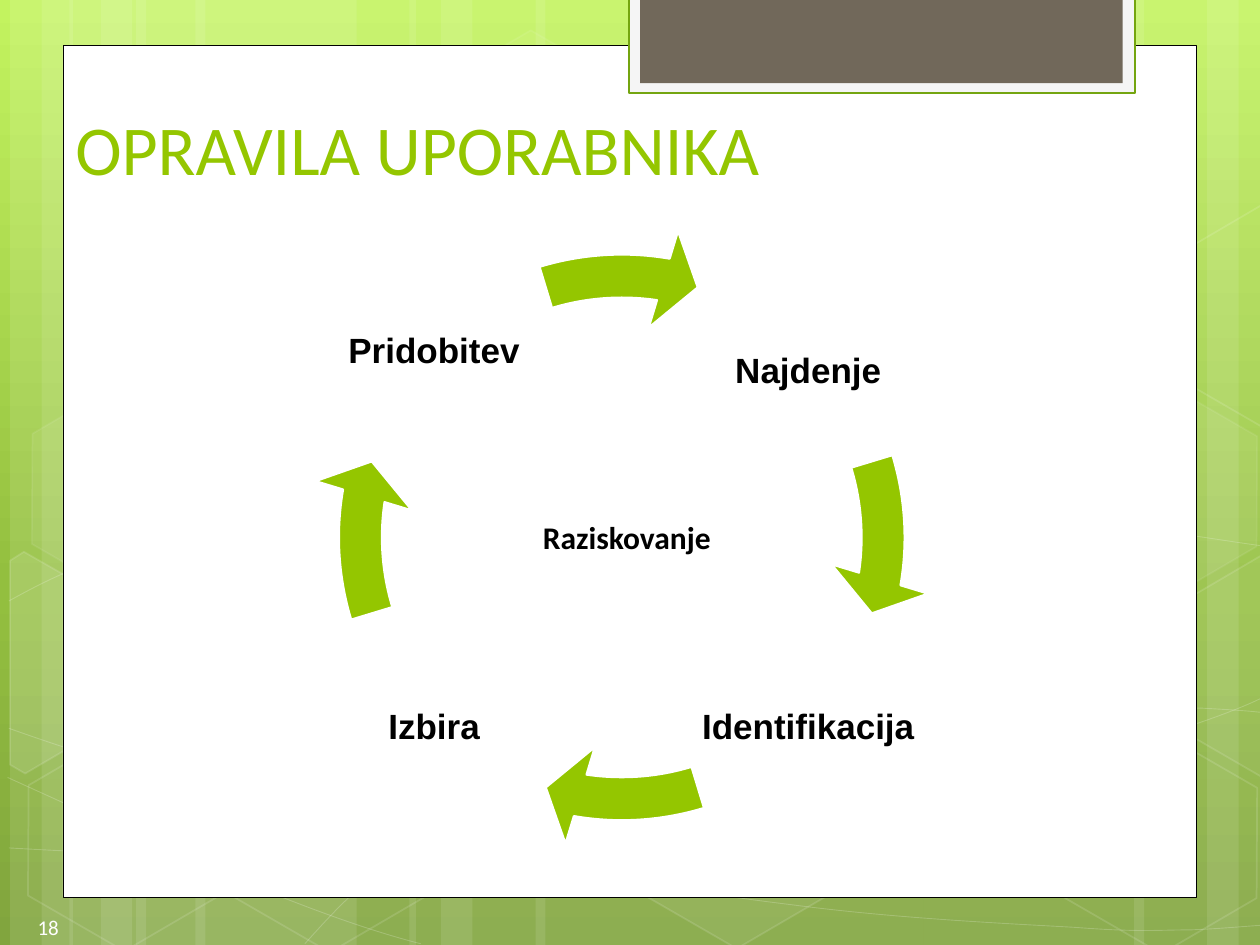
from copy import deepcopy
from lxml import etree
from pptx import Presentation
from pptx.dml.color import RGBColor
from pptx.enum.shapes import MSO_SHAPE
from pptx.enum.text import MSO_ANCHOR, PP_ALIGN
from pptx.oxml.ns import qn
from pptx.util import Inches, Pt

RECT, HEXAGON, ARROW = MSO_SHAPE.RECTANGLE, MSO_SHAPE.HEXAGON, MSO_SHAPE.CIRCULAR_ARROW
LEFT, CENTER = PP_ALIGN.LEFT, PP_ALIGN.CENTER
MIDDLE, BOTTOM, TOP = MSO_ANCHOR.MIDDLE, MSO_ANCHOR.BOTTOM, MSO_ANCHOR.TOP

COLORS = {"white": "FFFFFF", "black": "000000", "green": "94C600", "edge": "74A510",
          "frame": "F5F5F5", "tab": "71685A", "number": "FEFEFE"}
BACKGROUND = [(0, "C3F35F"), (0.62, "93BF3F"), (1, "81A53E")]

TITLE = "OPRAVILA UPORABNIKA"
CENTER_LABEL = "Raziskovanje"
PAGE_NUMBER = "18"
# Task, left and top of its label, top inset; clockwise from top right
TASKS = [("Najdenje", 5.54, 1.9, 0.35), ("Identifikacija", 5.54, 4.88, 0.03),
         ("Izbira", 2.57, 4.88, 0.03), ("Pridobitev", 2.57, 1.9, 0.03)]

# Light vertical bands: left, width, rotation
BANDS = [(1.08, 1.75, 0), (0.08, 0.5, 0), (0.33, 0.83, 0), (1.55, 1.75, 0), (0.55, 0.5, 0),
         (0.8, 0.83, 0), (7.33, 1.75, 180), (9.58, 0.5, 180), (9, 0.83, 180),
         (4.25, 3.08, 0), (3.25, 0.5, 0), (3.5, 0.83, 0)]
# Thin waves: start point, then control, control, end for each segment
WAVES = [
    [(0.07, 6.73), (0.61, 6.76), (1.15, 6.79), (1.9, 6.78), (2.65, 6.77), (3.58, 6.75),
     (4.58, 6.65), (5.58, 6.55), (7, 6.36), (7.92, 6.17), (8.83, 5.98), (9.77, 5.68),
     (10.07, 5.51)],
    [(0.07, 4.77), (0.36, 4.61), (0.65, 4.46), (1.21, 4.31), (1.78, 4.16), (2.59, 3.94),
     (3.47, 3.87), (4.36, 3.8), (5.44, 3.79), (6.54, 3.87), (7.64, 3.95), (9.47, 4.26),
     (10.07, 4.34)],
    [(0.06, 6.17), (1.27, 6.72), (2.47, 7.27), (3.34, 7.49)],
    [(0.07, 5.78), (0.38, 5.89), (0.7, 6), (1.28, 6.16), (1.86, 6.31), (2.73, 6.56),
     (3.57, 6.73), (4.4, 6.9), (5.45, 7.08), (6.28, 7.18), (7.11, 7.29), (8, 7.33),
     (8.53, 7.36), (9.05, 7.4), (9.19, 7.38), (9.45, 7.38), (9.71, 7.37), (9.89, 7.35),
     (10.07, 7.34)],
    [(2.42, 7.49), (2.6, 7.29), (2.78, 7.09), (3.02, 6.91), (3.26, 6.73), (3.6, 6.53),
     (3.88, 6.39), (4.16, 6.25), (4.33, 6.19), (4.7, 6.09), (5.06, 5.99), (5.73, 5.85),
     (6.08, 5.78), (6.44, 5.71), (6.49, 5.71), (6.8, 5.69), (7.11, 5.66), (7.6, 5.63),
     (7.94, 5.62), (8.29, 5.61), (8.86, 5.62), (8.86, 5.62), (8.86, 5.62), (9.53, 5.62),
     (9.53, 5.62), (9.71, 5.63), (9.88, 5.64), (9.97, 5.65), (10.06, 5.66), (10.03, 5.65),
     (10.06, 5.66)],
]
# Hexagons: left, top, fill opacity, line opacity (percent); or corners where cut by the edge
HEXAGONS = [
    (3.34, 0.36, 4, 8), (4.97, 5.89, 6, 12),
    (10, [(0.08, 4.45), (0.19, 4.38), (0.96, 4.82), (0.95, 5.7), (0.2, 6.14), (0.08, 6.07)]),
    (0.11, 5.91, None, 12), (0.14, 3.12, 7, 8), (1.74, 5.92, None, 12),
    (7.53, 4.53, 10, 12), (8.34, 5.93, None, 12), (8.34, 3.14, 7, 8),
    (4, [(9.26, 4.85), (10.01, 4.41), (10.09, 4.46), (10.09, 6.13), (10.02, 6.17), (9.26, 5.73)]),
    (None, [(9.26, 2.07), (10.01, 1.63), (10.1, 1.68), (10.09, 3.35), (10.02, 3.39), (9.26, 2.95)]),
]

prs = Presentation()
prs.slide_width, prs.slide_height = Inches(10), Inches(7.5)
s = prs.slides.add_slide(prs.slide_layouts[6])


def rgb(name):
    return RGBColor.from_string(COLORS[name])


def paint(fill, color, opacity):
    fill.solid()
    fill.fore_color.rgb = rgb(color)
    if opacity < 100:
        clr = fill._xPr.find(qn("a:solidFill"))[0]
        etree.SubElement(clr, qn("a:alpha"), val=str(opacity * 1000))


def style(sp, fill=None, opacity=100, line=None, width=1, line_opacity=100):
    sp.shadow.inherit = False
    if fill and opacity:
        paint(sp.fill, fill, opacity)
    else:
        sp.fill.background()
    if line:
        sp.line.width = Pt(width)
        paint(sp.line.fill, line, line_opacity)
    else:
        sp.line.fill.background()


def add_shape(kind, x, y, w, h, adjustments=(), rotation=0, **look):
    sp = s.shapes.add_shape(kind, Inches(x), Inches(y), Inches(w), Inches(h))
    for i, value in enumerate(adjustments):
        sp.adjustments[i] = value
    sp.rotation = rotation
    style(sp, **look)


def add_outline(points, close, **look):
    emu = [(Inches(x), Inches(y)) for x, y in points]
    builder = s.shapes.build_freeform(*emu[0])
    builder.add_line_segments(emu[1:], close=close)
    sp = builder.convert_to_shape()
    style(sp, **look)
    return sp


def add_curve(nodes, **look):
    """Draw through the nodes, then turn each three line steps into one cubic segment."""
    sp = add_outline(nodes, False, **look)
    steps = list(sp.element.iter(qn("a:lnTo")))
    for i in range(0, len(steps), 3):
        first, second, last = steps[i:i + 3]
        start, c1, c2, end = nodes[i:i + 4]
        outline = first.getparent()
        if (c1, c2) == (start, end):  # a straight segment
            outline.remove(first)
            outline.remove(second)
            continue
        cubic = etree.Element(qn("a:cubicBezTo"))
        first.addprevious(cubic)
        for step in (first, second, last):
            cubic.append(step[0])
            outline.remove(step)


def add_text(text, x, y, w, h, size=20, font="Calibri", color="black", bold=False,
             align=LEFT, anchor=MIDDLE, inset=None, top_inset=None, wrap=True):
    tf = s.shapes.add_textbox(Inches(x), Inches(y), Inches(w), Inches(h)).text_frame
    tf.word_wrap, tf.vertical_anchor = wrap, anchor
    if inset is not None:
        tf.margin_left = tf.margin_right = tf.margin_bottom = Inches(inset)
        tf.margin_top = Inches(top_inset)
    p = tf.paragraphs[0]
    p.alignment = align
    r = p.add_run()
    r.text = text
    r.font.size, r.font.name, r.font.bold = Pt(size), font, bold
    r.font.color.rgb = rgb(color)


# Background gradient, top to bottom
bg = s.background.fill
bg.gradient()
bg.gradient_angle = 270
stops = s.element.find(".//" + qn("a:gsLst"))
stops.append(deepcopy(stops[0]))
for stop, (position, color) in zip(bg.gradient_stops, BACKGROUND):
    stop.position = position
    stop.color.rgb = RGBColor.from_string(color)

# Background decoration
for x, w, rotation in BANDS:
    add_shape(RECT, x, 0, w, 7.5, rotation=rotation, fill="white", opacity=10)
for nodes in WAVES:
    add_curve(nodes, line="white", width=0.5, line_opacity=20)
for hexagon in HEXAGONS:
    if len(hexagon) == 2:
        opacity, corners = hexagon
        add_outline(corners, True, fill="white", opacity=opacity, line="white", line_opacity=12)
    else:
        x, y, opacity, line_opacity = hexagon
        add_shape(HEXAGON, x, y, 1.75, 1.52, (0.285, 1.155), 30, fill="white",
                  opacity=opacity, line="white", line_opacity=line_opacity)

# Content panel and tab
add_shape(RECT, 0.5, 0.36, 9, 6.76, fill="white", line="black", width=0.5)
add_shape(RECT, 4.99, -0.02, 4.02, 0.76, fill="frame", line="edge", width=1.25)
add_shape(RECT, 5.08, -0.02, 3.83, 0.68, fill="tab")

# Page number and title
add_text(PAGE_NUMBER, 0.2, 7.22, 0.63, 0.28, size=12, color="number")
add_text(TITLE, 0.5, 0.3, 9, 1.25, size=40, color="green", anchor=BOTTOM)

# Cycle: each label is followed by an arrow a quarter turn further on
DEGREE = 0.6  # adjustment units per degree
for i, (task, x, y, top_inset) in enumerate(TASKS):
    add_text(task, x, y, 1.75, 1.75, font="Arial", bold=True, align=CENTER,
             inset=0.03, top_inset=top_inset)
    head, tail = 9.15 + 90 * i, (343.09 + 90 * i) % 360
    add_shape(ARROW, 2.46, 1.79, 4.95, 4.95,
              (0.069, 7.76 * DEGREE, head * DEGREE, tail * DEGREE, 0.081),
              fill="green", line="white", width=1.25)
add_text(CENTER_LABEL, 4.21, 4.06, 1.78, 0.4, size=18, bold=True, anchor=TOP, wrap=False)

prs.save("out.pptx")
